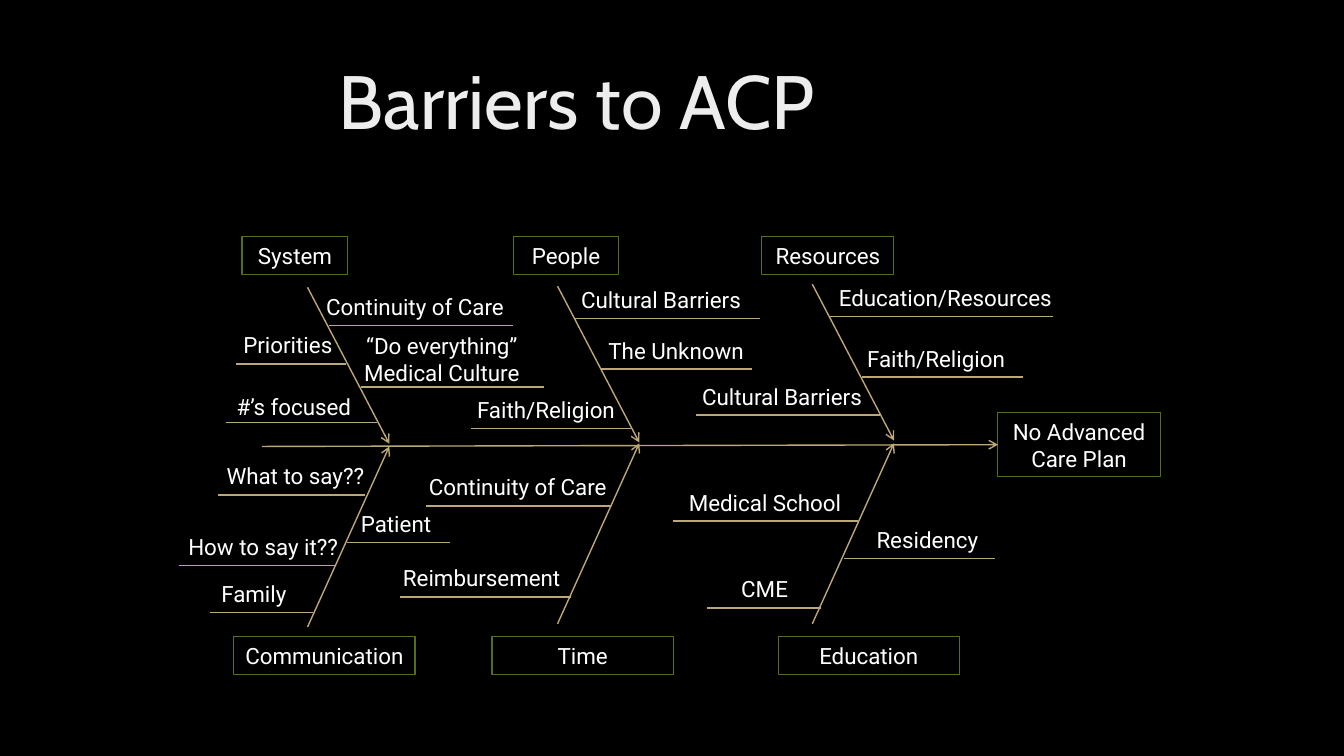
from dataclasses import dataclass

from lxml.etree import SubElement
from pptx import Presentation
from pptx.dml.color import RGBColor
from pptx.enum.shapes import MSO_CONNECTOR, MSO_SHAPE
from pptx.enum.text import MSO_ANCHOR, MSO_AUTO_SIZE as AutoSize, PP_ALIGN
from pptx.oxml.ns import qn
from pptx.util import Cm, Pt


@dataclass(frozen=True)
class Theme:
    background: str = "000000"
    text: str = "FFFFFF"
    box_line: str = "536F1D"
    bone_line: str = "BCA876"
    title_stops: tuple = ((0, "BFBFBF"), (28, "EDEDED"), (100, "FFFFFF"))
    title_angle: int = 80
    title_font: str = "Cabin"
    body_font: str = "Roboto"
    title_size: int = 54
    body_size: int = 16
    box_width: float = 0.75
    bone_width: float = 1


@dataclass(frozen=True)
class Cause:
    text: str
    left: float
    width: float
    line_left: float
    line_right: float
    line_y: float
    height: float = 0.94
    drop: float = 0


@dataclass(frozen=True)
class Category:
    name: str
    left: float
    width: float
    bone_x: float
    bone_y: float
    causes: tuple


THEME = Theme()
TITLE = "Barriers to ACP"
EFFECT = "No Advanced Care Plan"
BOX_HEIGHT = 0.94
BONE_RUN = 2.06

UPPER = (
    Category("System", 6.1, 2.67, 7.75, 7.24, (
        Cause("Priorities", 5.16, 4.19, 5.94, 8.71, 9.17),
        Cause("Continuity of Care", 7.87, 5.18, 8.28, 12.93, 8.2),
        Cause("“Do everything” Medical Culture", 8.05, 6.17, 9.09, 13.72, 9.75, 1.63, 0.13),
        Cause("#’s focused", 5.03, 4.75, 5.69, 9.5, 10.64, drop=0.08),
    )),
    Category("People", 12.93, 2.67, 14.05, 7.21, (
        Cause("Cultural Barriers", 14.07, 5.18, 14.5, 19.15, 8.03),
        Cause("Faith/Religion", 11.73, 4.06, 11.86, 15.93, 10.8),
        Cause("The Unknown", 14.45, 5.18, 15.14, 18.95, 9.3),
    )),
    Category("Resources", 19.2, 3.33, 20.47, 7.16, (
        Cause("Cultural Barriers", 17.12, 5.18, 17.55, 22.17, 10.46),
        Cause("Faith/Religion", 21.56, 4.06, 21.72, 25.78, 9.5),
        Cause("Education/Resources", 20.75, 6.15, 20.88, 26.54, 7.98),
    )),
)
LOWER = (
    Category("Communication", 5.89, 4.57, 7.75, 15.8, (
        Cause("What to say??", 5.03, 4.83, 5.49, 9.19, 12.47),
        Cause("How to say it??", 4.22, 4.83, 4.52, 8.46, 14.25),
        Cause("Patient", 7.39, 5.18, 8.74, 11.35, 13.67),
        Cause("Family", 3.81, 5.18, 5.28, 7.9, 15.44),
    )),
    Category("Time", 12.4, 4.57, 14.05, 15.72, (
        Cause("Continuity of Care", 10.46, 5.18, 10.74, 15.39, 12.75),
        Cause("Reimbursement", 9.55, 5.18, 10.08, 14.4, 15.04),
    )),
    Category("Education", 19.61, 4.57, 20.47, 15.72, (
        Cause("Medical School", 16.69, 5.18, 16.97, 21.62, 13.13),
        Cause("Residency", 20.78, 5.18, 21.26, 25.07, 14.07),
        Cause("CME", 16.59, 5.36, 17.81, 20.68, 15.32),
    )),
)
SIDES = ((UPPER, 5.97, 3.94), (LOWER, 16.05, -4.55))


def write(shape, text):
    frame = shape.text_frame
    frame.word_wrap = True
    frame.auto_size = AutoSize.SHAPE_TO_FIT_TEXT
    paragraph = frame.paragraphs[0]
    paragraph.alignment = PP_ALIGN.CENTER
    run = paragraph.add_run()
    run.text = text
    run.font.name = THEME.body_font
    run.font.size = Pt(THEME.body_size)
    run.font.color.rgb = RGBColor.from_string(THEME.text)


def add_box(shapes, text, left, top, width, height):
    shape = shapes.add_shape(MSO_SHAPE.RECTANGLE, Cm(left), Cm(top), Cm(width), Cm(height))
    shape.shadow.inherit = False
    shape.fill.background()
    shape.line.color.rgb = RGBColor.from_string(THEME.box_line)
    shape.line.width = Pt(THEME.box_width)
    write(shape, text)
    return shape


def add_line(shapes, x1, y1, x2, y2, arrow=False):
    line = shapes.add_connector(MSO_CONNECTOR.STRAIGHT, Cm(x1), Cm(y1), Cm(x2), Cm(y2))
    line.line.color.rgb = RGBColor.from_string(THEME.bone_line)
    line.line.width = Pt(THEME.bone_width)
    properties = line.element.spPr
    if arrow:
        SubElement(properties.find(qn("a:ln")), qn("a:tailEnd"), type="arrow")
    SubElement(properties, qn("a:effectLst"))
    return line


def add_cause(shapes, cause):
    group = shapes.add_group_shape()
    top = cause.line_y - cause.height + cause.drop
    label = group.shapes.add_textbox(Cm(cause.left), Cm(top), Cm(cause.width), Cm(cause.height))
    write(label, cause.text)
    add_line(group.shapes, cause.line_right, cause.line_y, cause.line_left, cause.line_y)


def add_title(slide):
    title = slide.shapes.title
    title.left, title.top, title.width, title.height = Cm(8.28), Cm(0.99), Cm(15.95), Cm(3.3)
    title.text_frame.vertical_anchor = MSO_ANCHOR.MIDDLE
    title.text_frame.word_wrap = True
    title.text_frame.auto_size = AutoSize.NONE
    paragraph = title.text_frame.paragraphs[0]
    paragraph.alignment = PP_ALIGN.LEFT
    paragraph.line_spacing = 0.9
    run = paragraph.add_run()
    run.text = TITLE
    run.font.size = Pt(THEME.title_size)
    gradient = SubElement(run.font._element, qn("a:gradFill"))
    stops = SubElement(gradient, qn("a:gsLst"))
    for position, color in THEME.title_stops:
        stop = SubElement(stops, qn("a:gs"), pos=str(position * 1000))
        SubElement(stop, qn("a:srgbClr"), val=color)
    SubElement(gradient, qn("a:lin"), ang=str(THEME.title_angle * 60000), scaled="0")
    run.font.name = THEME.title_font


def main():
    presentation = Presentation()
    presentation.slide_width, presentation.slide_height = Cm(33.87), Cm(19.05)
    slide = presentation.slides.add_slide(presentation.slide_layouts[5])
    slide.background.fill.solid()
    slide.background.fill.fore_color.rgb = RGBColor.from_string(THEME.background)
    add_title(slide)

    shapes = slide.shapes
    effect = add_box(shapes, EFFECT, 25.15, 10.39, 4.09, 1.63)
    spine = add_line(shapes, 6.6, 11.25, 25.15, 11.13, arrow=True)
    spine.end_connect(effect, 1)

    for categories, box_top, bone_rise in SIDES:
        for category in categories:
            add_box(shapes, category.name, category.left, box_top, category.width, BOX_HEIGHT)
            add_line(shapes, category.bone_x, category.bone_y,
                     category.bone_x + BONE_RUN, category.bone_y + bone_rise, arrow=True)
            for cause in category.causes:
                add_cause(shapes, cause)

    presentation.save("out.pptx")


if __name__ == "__main__":
    main()
